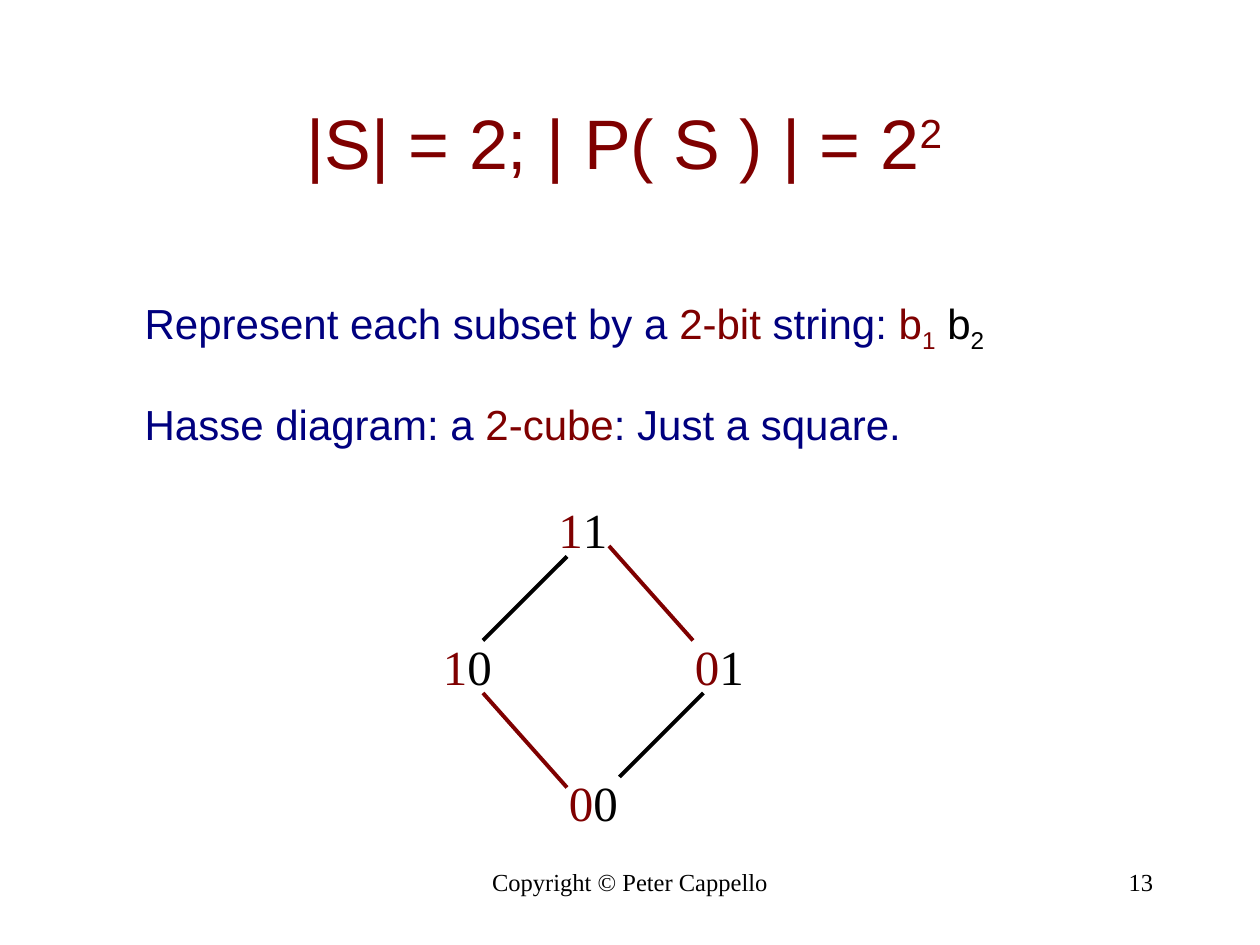
from dataclasses import dataclass

from lxml.etree import SubElement
from pptx import Presentation
from pptx.dml.color import RGBColor as RGB
from pptx.enum.shapes import MSO_CONNECTOR as Connector
from pptx.enum.text import MSO_ANCHOR as Anchor, MSO_AUTO_SIZE as AutoSize, PP_ALIGN as Align
from pptx.oxml.ns import qn
from pptx.util import Pt

EMU_PER_PX = 7620  # 120 px to the inch


def px(length):
    return length * EMU_PER_PX


@dataclass(frozen=True)
class Theme:
    maroon: RGB = RGB(0x7F, 0x00, 0x00)
    navy: RGB = RGB(0x00, 0x00, 0x7F)
    black: RGB = RGB(0x00, 0x00, 0x00)
    sans: str = "Arial"
    serif: str = "Times New Roman"
    title: int = 40
    body: int = 24
    node: int = 28
    footer: int = 14
    edge: float = 2.25


class SlideBuilder:
    def __init__(self, slide, theme):
        self.slide = slide
        self.theme = theme

    def add_runs(self, paragraph, parts, font, size):
        """Each part is (text, colour) or (text, colour, baseline percent)."""
        for text, colour, *baseline in parts:
            run = paragraph.add_run()
            run.text = text
            run.font.name = font
            run.font.size = Pt(size)
            run.font.color.rgb = colour
            if baseline:
                run.font._element.set("baseline", str(baseline[0] * 1000))

    def text(self, box, parts, font, size, align=Align.LEFT, anchor=Anchor.TOP, wrap=True):
        frame = self.slide.shapes.add_textbox(*map(px, box)).text_frame
        frame.word_wrap = wrap
        frame.vertical_anchor = anchor
        frame.paragraphs[0].alignment = align
        self.add_runs(frame.paragraphs[0], parts, font, size)
        return frame

    def body(self, box, lines):
        first, *others = lines
        frame = self.text(box, first, self.theme.sans, self.theme.body)
        for line in others:
            self.add_runs(frame.add_paragraph(), line, self.theme.sans, self.theme.body)
        for paragraph in frame.paragraphs:
            paragraph.line_spacing = 1.7
            paragraph.space_before = Pt(self.theme.body * 0.2)
            properties = paragraph._p.get_or_add_pPr()
            properties.set("marL", str(px(45)))
            properties.set("indent", str(px(-45)))

    def node(self, bits, left, top):
        parts = zip(bits, (self.theme.maroon, self.theme.black))
        frame = self.text((left, top, 71, 68), parts, self.theme.serif, self.theme.node, wrap=False)
        frame.auto_size = AutoSize.SHAPE_TO_FIT_TEXT

    def edge(self, start, end, colour):
        line = self.slide.shapes.add_connector(Connector.STRAIGHT, *map(px, start + end))
        line.line.color.rgb = colour
        line.line.width = Pt(self.theme.edge)
        SubElement(line._element.spPr, qn("a:effectLst"))


def main():
    deck = Presentation()
    deck.slide_width, deck.slide_height = px(1200), px(900)
    theme = Theme()
    maroon, navy, black = theme.maroon, theme.navy, theme.black
    builder = SlideBuilder(deck.slides.add_slide(deck.slide_layouts[6]), theme)

    # Footer
    builder.text((410, 820, 380, 60), [("Copyright © Peter Cappello", black)],
                 theme.serif, theme.footer, Align.CENTER)
    builder.text((860, 820, 250, 60), [("13", black)], theme.serif, theme.footer, Align.RIGHT)

    # Title
    builder.text((90, 60, 1020, 150), [("|S| = 2; | P( S ) | = 2", maroon), ("2 ", maroon, 30)],
                 theme.sans, theme.title, Align.CENTER, Anchor.MIDDLE)

    # Explanation
    builder.body((126, 239, 994, 580), [
        [("Represent each subset by a ", navy), ("2-bit", maroon), (" string: ", navy),
         ("b", maroon), ("1", maroon, -25), (" b", black), ("2", black, -25)],
        [("Hasse diagram: a ", navy), ("2-cube", maroon), (": Just a square.", navy)],
    ])

    # Hasse diagram: subsets as bit strings
    for bits, left, top in (("00", 530, 730), ("11", 520, 470), ("10", 410, 600), ("01", 650, 600)):
        builder.node(bits, left, top)

    # Hasse diagram: maroon edges flip the first bit, black edges the second
    for start, end, colour in (
        ((540, 750), (460, 660), maroon),
        ((660, 610), (580, 520), maroon),
        ((460, 610), (540, 530), black),
        ((590, 740), (670, 660), black),
    ):
        builder.edge(start, end, colour)

    deck.save("out.pptx")


if __name__ == "__main__":
    main()
